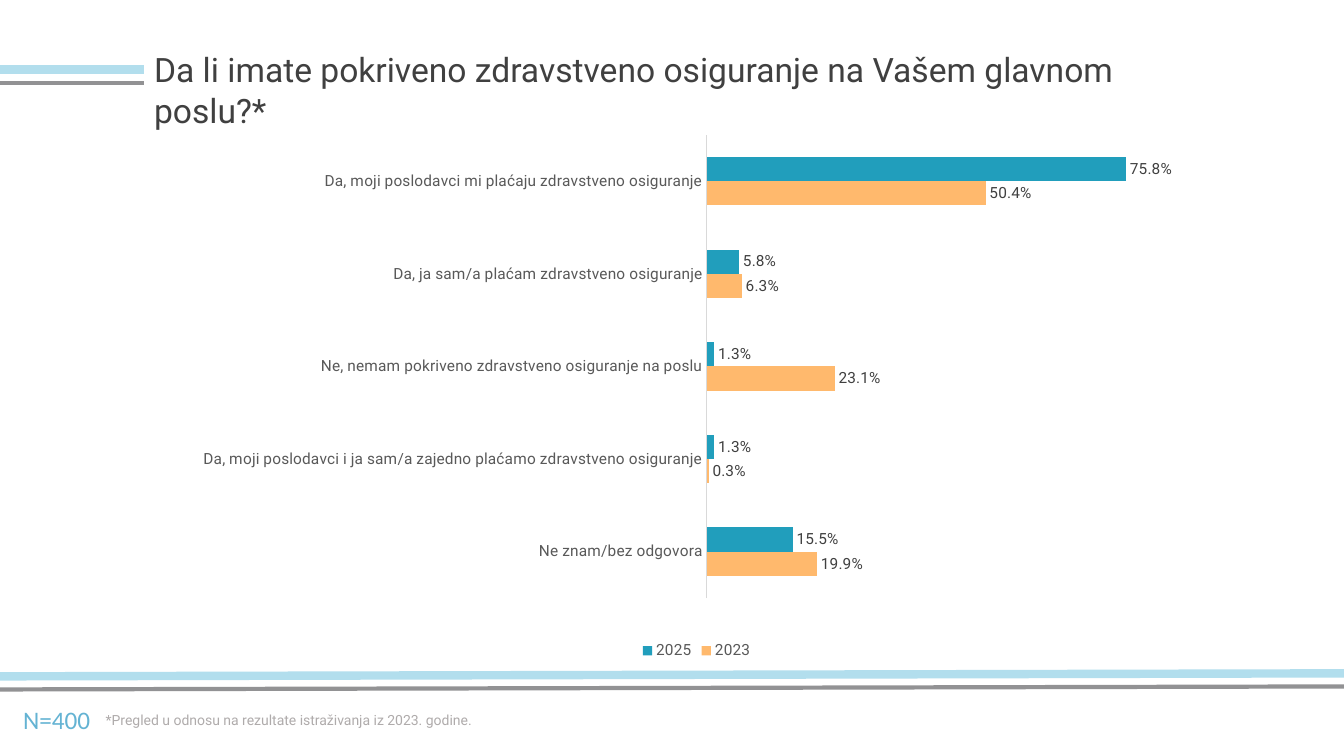
import pptx
import pptx.chart.data
import pptx.dml.color
import pptx.enum.chart
import pptx.enum.shapes
import pptx.enum.text
import pptx.oxml
import pptx.oxml.ns
import pptx.util

RGBColor = pptx.dml.color.RGBColor
WHITE = RGBColor(0xFF, 0xFF, 0xFF)
BLACK = RGBColor(0x00, 0x00, 0x00)
CHARCOAL = RGBColor(0x40, 0x40, 0x40)
AXIS_TEXT = RGBColor(0x59, 0x59, 0x59)
AXIS_LINE = RGBColor(0xD9, 0xD9, 0xD9)
NOTE_GREY = RGBColor(0xAF, 0xAB, 0xAB)
RULE_GREY = RGBColor(0x92, 0x92, 0x94)
RULE_BLUE = RGBColor(0xB2, 0xDE, 0xED)
SAMPLE_BLUE = RGBColor(0x64, 0xB3, 0xD3)
TEAL = RGBColor(0x21, 0x9E, 0xBC)
ORANGE = RGBColor(0xFF, 0xB9, 0x6D)

EMU_PER_PX = 9144
CHART_NS = pptx.oxml.ns.nsdecls("c")


class SurveySlide:
    font_name = "Roboto"
    chart_size = 11
    percent = "0.0%"

    def __init__(self, presentation):
        self.slide = presentation.slides.add_slide(presentation.slide_layouts[6])
        self.slide.background.fill.solid()
        self.slide.background.fill.fore_color.rgb = WHITE

    def px(self, *lengths):
        return [pptx.util.Emu(length * EMU_PER_PX) for length in lengths]

    def style_font(self, font, size, color, name=None):
        font.size = pptx.util.Pt(size)
        font.name = name or self.font_name
        font.color.rgb = color

    def text(self, box, wording, size, color, name=None):
        frame = self.slide.shapes.add_textbox(*self.px(*box)).text_frame
        frame.word_wrap = True
        frame.auto_size = pptx.enum.text.MSO_AUTO_SIZE.SHAPE_TO_FIT_TEXT
        run = frame.paragraphs[0].add_run()
        run.text = wording
        self.style_font(run.font, size, color, name)

    def rule(self, start, end, color, width):
        rule = self.slide.shapes.add_connector(
            pptx.enum.shapes.MSO_CONNECTOR.STRAIGHT, *self.px(*start, *end))
        rule.line.color.rgb = color
        rule.line.width = pptx.util.Pt(width)
        effects = pptx.oxml.parse_xml(f'<a:effectLst {pptx.oxml.ns.nsdecls("a")}/>')
        rule._element.spPr.append(effects)

    def bar_chart(self, box, answers, years, maximum, plot_box):
        data = pptx.chart.data.CategoryChartData(number_format=self.percent)
        data.categories = answers
        for year, shares, _ in years:
            data.add_series(year, shares)
        chart = self.slide.shapes.add_chart(
            pptx.enum.chart.XL_CHART_TYPE.BAR_CLUSTERED, *self.px(*box), data).chart
        chart.has_title = False
        self.style_font(chart.font, self.chart_size, BLACK)
        chart.has_legend = True
        chart.legend.position = pptx.enum.chart.XL_LEGEND_POSITION.BOTTOM
        chart.legend.include_in_layout = False
        self.style_font(chart.legend.font, self.chart_size, AXIS_TEXT)

        answer_axis = chart.category_axis
        answer_axis.major_tick_mark = pptx.enum.chart.XL_TICK_MARK.NONE
        answer_axis.minor_tick_mark = pptx.enum.chart.XL_TICK_MARK.NONE
        answer_axis.has_major_gridlines = False
        answer_axis.format.line.color.rgb = AXIS_LINE
        answer_axis.format.line.width = pptx.util.Pt(0.75)
        self.style_font(answer_axis.tick_labels.font, self.chart_size, AXIS_TEXT)

        share_axis = chart.value_axis
        share_axis.minimum_scale = 0
        share_axis.maximum_scale = maximum
        share_axis.has_major_gridlines = False
        share_axis.tick_labels.number_format = self.percent
        share_axis.tick_labels.number_format_is_linked = False
        share_axis.visible = False

        plot = chart.plots[0]
        plot.gap_width = 182
        plot.overlap = 0
        plot.vary_by_categories = False
        for series, (_, _, color) in zip(plot.series, years):
            series.format.fill.solid()
            series.format.fill.fore_color.rgb = color
            series.invert_if_negative = False
            labels = series.data_labels
            labels.show_value = True
            labels.position = pptx.enum.chart.XL_LABEL_POSITION.OUTSIDE_END
            labels.number_format = self.percent
            labels.number_format_is_linked = False
            self.style_font(labels.font, self.chart_size, CHARCOAL)
        self.place_plot(chart, plot_box)

    def place_plot(self, chart, plot_box):
        plot_area = chart._chartSpace.chart.plotArea
        for layout in plot_area.findall(pptx.oxml.ns.qn("c:layout")):
            plot_area.remove(layout)
        modes = '<c:xMode val="edge"/><c:yMode val="edge"/>'
        sizes = "".join(f'<c:{tag} val="{part}"/>' for tag, part in zip("xywh", plot_box))
        plot_area.insert(0, pptx.oxml.parse_xml(
            f'<c:layout {CHART_NS}><c:manualLayout><c:layoutTarget val="inner"/>'
            f'{modes}{sizes}</c:manualLayout></c:layout>'))


def main():
    presentation = pptx.Presentation()
    presentation.slide_width = pptx.util.Emu(1333 * EMU_PER_PX)
    presentation.slide_height = pptx.util.Emu(750 * EMU_PER_PX)
    survey = SurveySlide(presentation)

    survey.text((143, 44, 1070, 50),
                "Da li imate pokriveno zdravstveno osiguranje na Vašem glavnom poslu?*",
                24, CHARCOAL)
    for width, left_y, right_y, right_x, color in (
            (3, 684, 681, 1333, RULE_GREY),
            (6, 671, 668, 1333, RULE_BLUE),
            (3, 82, 82, 143, RULE_GREY),
            (6, 69, 69, 143, RULE_BLUE)):
        survey.rule((0, left_y), (right_x, right_y), color, width)
    survey.text((95, 701, 700, 27),
                "*Pregled u odnosu na rezultate istraživanja iz 2023. godine.",
                10, NOTE_GREY)

    answers = (
        "Ne znam/bez odgovora",
        "Da, moji poslodavci i ja sam/a zajedno plaćamo zdravstveno osiguranje",
        "Ne, nemam pokriveno zdravstveno osiguranje na poslu",
        "Da, ja sam/a plaćam zdravstveno osiguranje",
        "Da, moji poslodavci mi plaćaju zdravstveno osiguranje",
    )
    years = (
        ("2023", (0.199, 0.003, 0.231, 0.063, 0.504), ORANGE),
        ("2025", (0.155, 0.013, 0.013, 0.058, 0.758), TEAL),
    )
    survey.bar_chart((181, 112, 1020, 547), answers, years, 0.8,
                     (0.51, 0.04, 0.43, 0.84))
    survey.text((13, 694, 105, 40), "N=400", 18, SAMPLE_BLUE, "Calibri")
    presentation.save("out.pptx")


if __name__ == "__main__":
    main()
